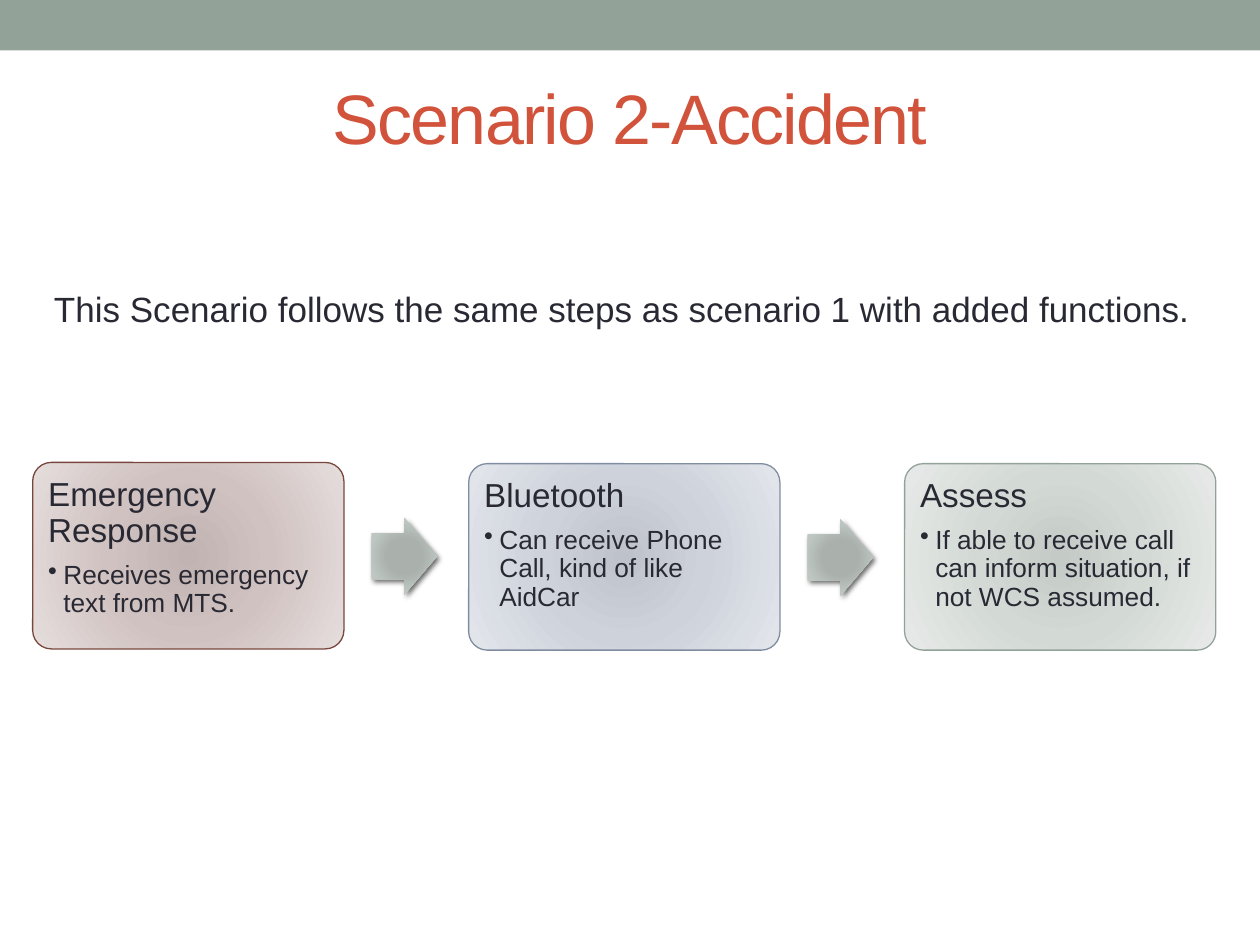
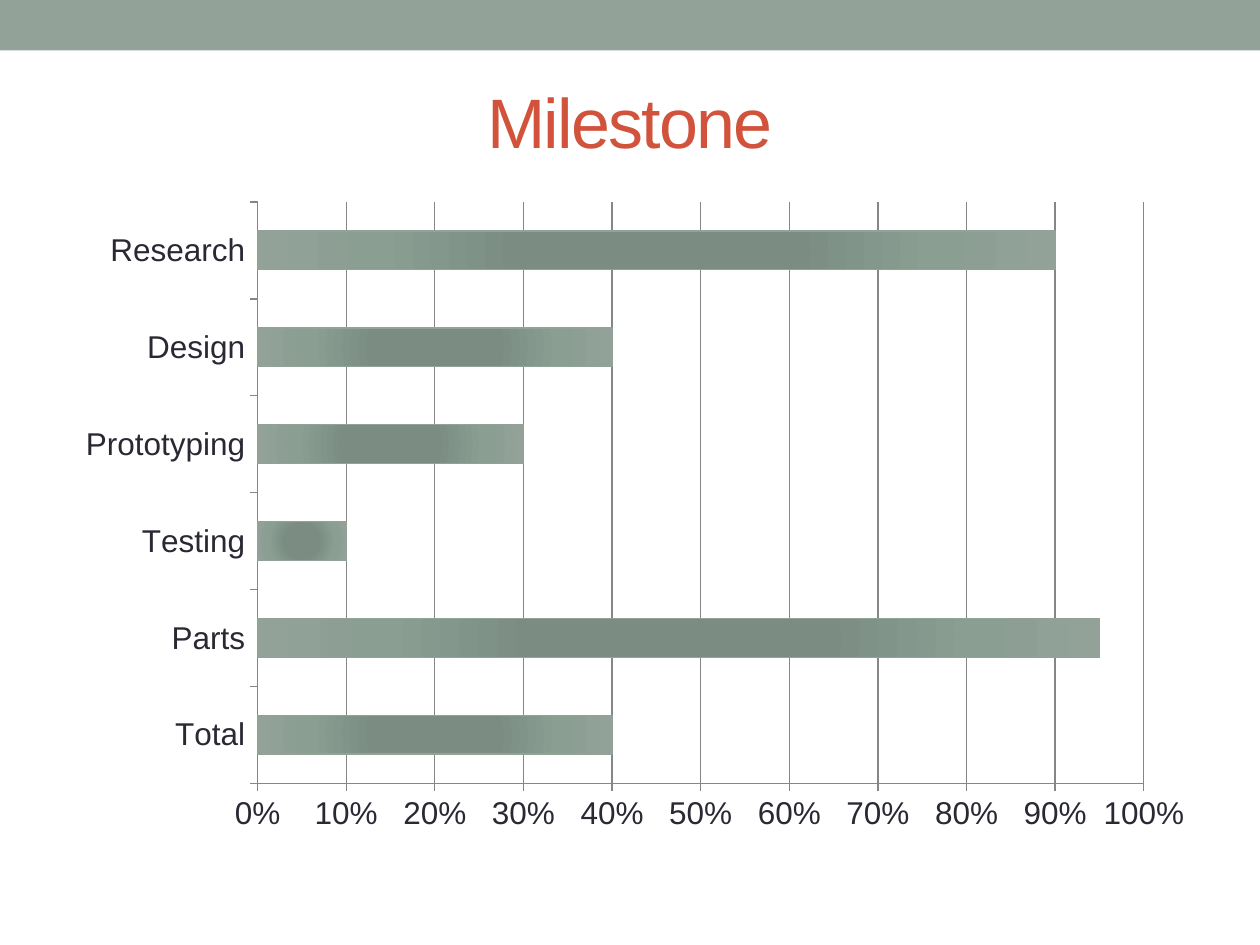
from lxml.etree import SubElement as Sub
from pptx import Presentation
from pptx.chart.data import CategoryChartData as ChartData
from pptx.dml.color import RGBColor as RGB
from pptx.enum.chart import XL_CHART_TYPE as Kind, XL_TICK_MARK as Tick
from pptx.enum.shapes import MSO_SHAPE as Shape
from pptx.enum.text import MSO_ANCHOR as Anchor, PP_ALIGN as Align
from pptx.oxml.ns import qn
from pptx.util import Inches, Pt

# Shared style
FONT = "Arial"
SAGE = RGB(0x93, 0xA2, 0x99)
RUST = RGB(0xD2, 0x53, 0x3C)
INK = RGB(0x29, 0x29, 0x34)
GREY = RGB(0x86, 0x86, 0x86)
BROWN = RGB(0x79, 0x46, 0x3D)
SLATE = RGB(0x80, 0x8D, 0xA0)
BLACK = RGB(0, 0, 0)

# Gradients: (percent, colour), from the centre outwards
ROSE_FADE = [(0, RGB(0xC0, 0xB3, 0xB1)), (45, RGB(0xD0, 0xC2, 0xC0)),
             (100, RGB(0xE5, 0xDE, 0xDD))]
BLUE_FADE = [(0, RGB(0xBE, 0xC3, 0xCB)), (45, RGB(0xCD, 0xD2, 0xDB)),
             (100, RGB(0xE3, 0xE6, 0xEB))]
SAGE_FADE = [(0, RGB(0xC4, 0xCA, 0xC6)), (45, RGB(0xD3, 0xDA, 0xD6)),
             (100, RGB(0xE7, 0xEA, 0xE8))]
ARROW_FADE = [(0, RGB(0xAA, 0xB2, 0xAD)), (34, RGB(0xAA, 0xB1, 0xAD)),
              (70, RGB(0xBD, 0xC6, 0xC1)), (100, RGB(0xC8, 0xCE, 0xCA))]
BAR_FADE = [(0, RGB(0x7B, 0x8E, 0x82)), (34, RGB(0x7B, 0x8D, 0x83)),
            (70, RGB(0x8A, 0x9E, 0x92)), (100, SAGE)]

# Steps: title, detail, fade, edge, top
STEPS = [
    ("Emergency Response", "Receives emergency text from MTS.",
     ROSE_FADE, BROWN, 3.67),
    ("Bluetooth", "Can receive Phone Call, kind of like AidCar",
     BLUE_FADE, SLATE, 3.68),
    ("Assess",
     "If able to receive call can inform situation, if not WCS assumed.",
     SAGE_FADE, SAGE, 3.68),
]
PITCH = 3.46

RATES = {"Total": 0.4, "Parts": 0.95, "Testing": 0.1,
         "Prototyping": 0.3, "Design": 0.4, "Research": 0.9}


def style(font, size, color=INK):
    font.name, font.size, font.color.rgb = FONT, Pt(size), color


def fade(fill, node, stops):
    """Fill with a circular gradient; node is the XML that holds the fill."""
    fill.gradient()
    grad = node.find(".//" + qn("a:gradFill"))
    for child in list(grad):
        grad.remove(child)
    group = Sub(grad, qn("a:gsLst"))
    for spot, color in stops:
        stop = Sub(group, qn("a:gs"), pos=str(spot * 1000))
        Sub(stop, qn("a:srgbClr"), val=str(color))
    ring = Sub(grad, qn("a:path"), path="circle")
    Sub(ring, qn("a:fillToRect"), {side: "100000" for side in "ltrb"})


def add_form(slide, kind, left, top, width, height):
    form = slide.shapes.add_shape(kind, Inches(left), Inches(top),
                                  Inches(width), Inches(height))
    form.shadow.inherit = False
    form.line.fill.background()
    return form


def add_text(slide, text, left, top, width, height, size, color=INK):
    box = slide.shapes.add_textbox(Inches(left), Inches(top),
                                   Inches(width), Inches(height))
    frame = box.text_frame
    frame.word_wrap = True
    frame.vertical_anchor = Anchor.MIDDLE
    para = frame.paragraphs[0]
    para.text = text
    style(para.font, size, color)
    return para


def add_slide(deck, title, top, height):
    """Blank slide with the top band and a title."""
    slide = deck.slides.add_slide(deck.slide_layouts[6])
    band = add_form(slide, Shape.RECTANGLE, 0, 0, 10, 0.4)
    band.fill.solid()
    band.fill.fore_color.rgb = SAGE
    para = add_text(slide, title, 0.5, top, 9, height, 40, RUST)
    para.alignment = Align.CENTER
    para.runs[0]._r.get_or_add_rPr().set("spc", "-100")
    return slide


def add_bullet(para):
    props = para._p.get_or_add_pPr()
    props.set("marL", str(Inches(0.12)))
    props.set("indent", str(Inches(-0.12)))
    Sub(props, qn("a:buChar"), char="•")


def add_step(slide, left, top, title, note, stops, edge):
    card = add_form(slide, Shape.ROUNDED_RECTANGLE, left, top, 2.47, 1.48)
    card.adjustments[0] = 0.1
    fade(card.fill, card._element.spPr, stops)
    card.line.color.rgb = edge
    card.line.width = Pt(0.75)
    frame = card.text_frame
    frame.word_wrap = True
    frame.vertical_anchor = Anchor.TOP
    frame.margin_left = frame.margin_right = Inches(0.08)
    frame.margin_top = frame.margin_bottom = Inches(0.08)
    head, body = frame.paragraphs[0], frame.add_paragraph()
    add_bullet(body)
    for para, text, size, gap in ((head, title, 19, 0.35),
                                  (body, note, 15, 0.15)):
        para.text = text
        para.alignment = Align.LEFT
        para.line_spacing = 0.9
        para.space_after = Pt(size * gap)
        style(para.font, size)


def add_arrow(slide, left, top):
    arrow = add_form(slide, Shape.RIGHT_ARROW, left, top, 0.52, 0.61)
    arrow.adjustments[0] = 0.6
    arrow.adjustments[1] = 0.5
    props = arrow._element.spPr
    fade(arrow.fill, props, ARROW_FADE)
    shade = Sub(props.find(qn("a:effectLst")), qn("a:outerShdw"),
                blurRad=str(Pt(3)), dist=str(Pt(2)), dir="2700000",
                rotWithShape="0")
    tone = Sub(shade, qn("a:srgbClr"), val=str(BLACK))
    Sub(tone, qn("a:alpha"), val="60000")


def add_bars(slide, rates):
    data = ChartData(number_format="0%")
    data.categories = list(rates)
    data.add_series("Series 1", list(rates.values()))
    chart = slide.shapes.add_chart(
        Kind.BAR_CLUSTERED, Inches(0.5), Inches(1.5),
        Inches(9.08), Inches(5.2), data).chart
    chart.has_legend = chart.has_title = False
    style(chart.font, 18)

    # Bars
    plot = chart.plots[0]
    plot.gap_width = 150
    plot.vary_by_categories = False
    bars = plot.series[0]
    fade(bars.format.fill, bars._element, BAR_FADE)
    bars.format.line.color.rgb = SAGE
    bars.format.line.width = Pt(0.75)

    # Axes
    scale = chart.value_axis
    scale.minimum_scale, scale.maximum_scale = 0, 1
    scale.major_unit = 0.1
    scale.has_major_gridlines = True
    scale.tick_labels.number_format = "0%"
    scale.tick_labels.number_format_is_linked = False
    for axis in (scale, chart.category_axis):
        axis.major_tick_mark = Tick.OUTSIDE
        axis.minor_tick_mark = Tick.NONE
    for part in (scale, chart.category_axis, scale.major_gridlines):
        part.format.line.color.rgb = GREY
        part.format.line.width = Pt(0.75)


def main():
    deck = Presentation()
    deck.slide_width, deck.slide_height = Inches(10), Inches(7.5)

    # Accident steps
    slide = add_slide(deck, "Scenario 2-Accident", 0.3, 1.25)
    add_text(slide, "This Scenario follows the same steps as scenario 1 "
             "with added functions.", 0.33, 2.23, 9.25, 0.44, 20)
    for i, (title, note, stops, edge, top) in enumerate(STEPS):
        left = 0.26 + i * PITCH
        add_step(slide, left, top, title, note, stops, edge)
        if i < len(STEPS) - 1:
            add_arrow(slide, left + 2.69, top + 0.44)

    # Milestone chart
    slide = add_slide(deck, "Milestone", 0.42, 1.08)
    add_bars(slide, RATES)

    deck.save("out.pptx")


if __name__ == "__main__":
    main()
